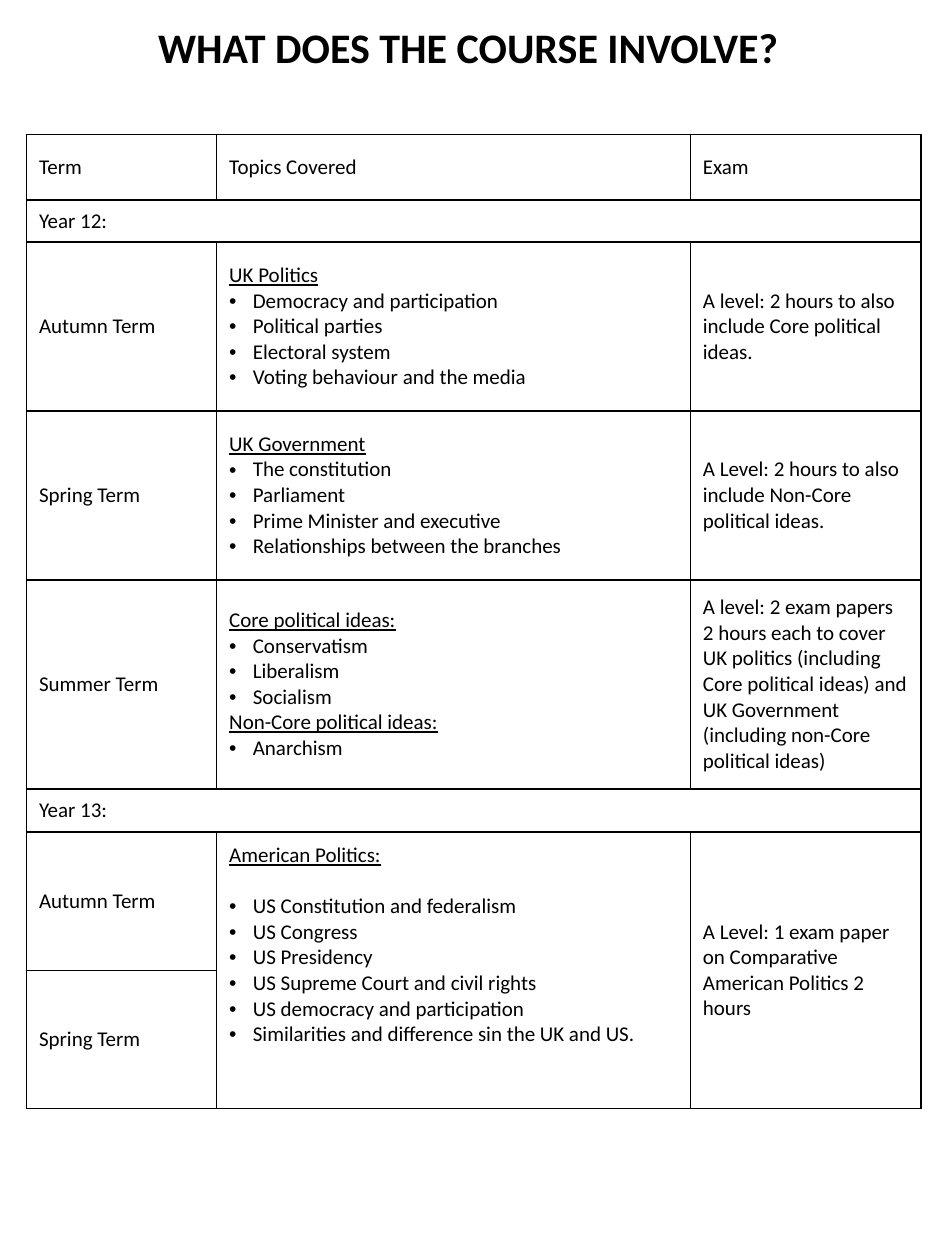
from lxml.etree import SubElement
from pptx import Presentation
from pptx.dml.color import RGBColor
from pptx.enum.text import MSO_ANCHOR, MSO_AUTO_SIZE, PP_ALIGN
from pptx.oxml import parse_xml
from pptx.oxml.ns import nsdecls, qn
from pptx.util import Pt

TITLE = "WHAT DOES THE COURSE INVOLVE?"

# A topics cell is a list of (heading, bullets); other cells are plain text.
ROWS = [
    ("Term", "Topics Covered", "Exam"),
    ("Year 12:", None, None),
    ("Autumn Term",
     [("UK Politics", ["Democracy and participation", "Political parties",
                       "Electoral system", "Voting behaviour and the media"])],
     "A level: 2 hours to also include Core political ideas."),
    ("Spring Term",
     [("UK Government", ["The constitution", "Parliament", "Prime Minister and executive",
                         "Relationships between the branches"])],
     "A Level: 2 hours to also include Non-Core political ideas."),
    ("Summer Term",
     [("Core political ideas:", ["Conservatism", "Liberalism", "Socialism"]),
      ("Non-Core political ideas:", ["Anarchism"])],
     "A level: 2 exam papers 2 hours each to cover UK politics (including Core political "
     "ideas) and UK Government (including non-Core political ideas)"),
    ("Year 13:", None, None),
    ("Autumn Term",
     [("American Politics:", ["US Constitution and federalism", "US Congress", "US Presidency",
                              "US Supreme Court and civil rights",
                              "US democracy and participation",
                              "Similarities and difference sin the UK and US."])],
     "A Level: 1 exam paper on Comparative American Politics 2 hours"),
    ("Spring Term", None, None),
]
MERGES = [((1, 0), (1, 2)), ((5, 0), (5, 2)), ((6, 1), (7, 1)), ((6, 2), (7, 2))]
AMERICAN = (6, 1)

COLS = [108.7, 270.7, 131.8]
HEIGHTS = [37.4, 24, 96.5, 96.5, 119.4, 24.8, 79, 79]
LEFT, TOP = 15.1, 77
THEME = {"font": "Calibri", "ink": "000000", "title": 24, "body": 12,
         "line": 1, "indent": 13.5, "heading_gap": 14.6}


def write(p, text, size, **formats):
    r = p.add_run()
    r.text = text
    formats = {"name": THEME["font"], "size": Pt(size), **formats}
    for key, value in formats.items():
        setattr(r.font, key, value)
    r.font.color.rgb = RGBColor.from_string(THEME["ink"])


def add_bullet(p):
    pPr = p._p.get_or_add_pPr()
    pPr.set("marL", str(Pt(THEME["indent"])))
    pPr.set("indent", str(-Pt(THEME["indent"])))
    SubElement(pPr, qn("a:buFont"), typeface="Arial")
    SubElement(pPr, qn("a:buChar"), char="•")


def add_borders(cell):
    tcPr = cell._tc.get_or_add_tcPr()
    for i, side in enumerate("LRTB"):
        tcPr.insert(i, parse_xml(
            f'<a:ln{side} {nsdecls("a")} w="{Pt(THEME["line"])}"><a:solidFill>'
            f'<a:srgbClr val="{THEME["ink"]}"/></a:solidFill></a:ln{side}>'))


def fill_cell(cell, content):
    lines = [(content, False, False)]
    if isinstance(content, list):
        lines = [line for heading, bullets in content
                 for line in [(heading, True, False)] + [(b, False, True) for b in bullets]]
    tf = cell.text_frame
    for i, (text, underline, bullet) in enumerate(lines):
        p = tf.add_paragraph() if i else tf.paragraphs[0]
        write(p, text, THEME["body"], underline=underline)
        if bullet:
            add_bullet(p)


def add_title(s):
    title = s.shapes.title
    box = {"left": 9.4, "top": 8.6, "width": 516.2, "height": 36}
    for key, value in box.items():
        setattr(title, key, Pt(value))
    tf = title.text_frame
    formats = {"word_wrap": True, "auto_size": MSO_AUTO_SIZE.NONE,
               "vertical_anchor": MSO_ANCHOR.MIDDLE}
    for key, value in formats.items():
        setattr(tf, key, value)
    p = tf.paragraphs[0]
    p.alignment = PP_ALIGN.CENTER
    write(p, TITLE, THEME["title"], bold=True)


def add_course_table(s):
    table = s.shapes.add_table(len(ROWS), len(COLS), Pt(LEFT), Pt(TOP),
                               Pt(sum(COLS)), Pt(sum(HEIGHTS))).table
    table.first_row = table.horz_banding = False
    for col, width in zip(table.columns, COLS):
        col.width = Pt(width)
    for row, height in zip(table.rows, HEIGHTS):
        row.height = Pt(height)
    for first, last in MERGES:
        table.cell(*first).merge(table.cell(*last))
    for r, row in enumerate(ROWS):
        for c, content in enumerate(row):
            cell = table.cell(r, c)
            cell.fill.background()
            cell.vertical_anchor = MSO_ANCHOR.MIDDLE
            add_borders(cell)
            if content:
                fill_cell(cell, content)
    american = table.cell(*AMERICAN)
    american.vertical_anchor = MSO_ANCHOR.TOP
    american.margin_top = Pt(6)
    american.text_frame.paragraphs[0].space_after = Pt(THEME["heading_gap"])


def main():
    prs = Presentation()
    prs.slide_width, prs.slide_height = Pt(540), Pt(720)
    s = prs.slides.add_slide(prs.slide_layouts[5])
    add_title(s)
    add_course_table(s)
    prs.save("out.pptx")


if __name__ == "__main__":
    main()
